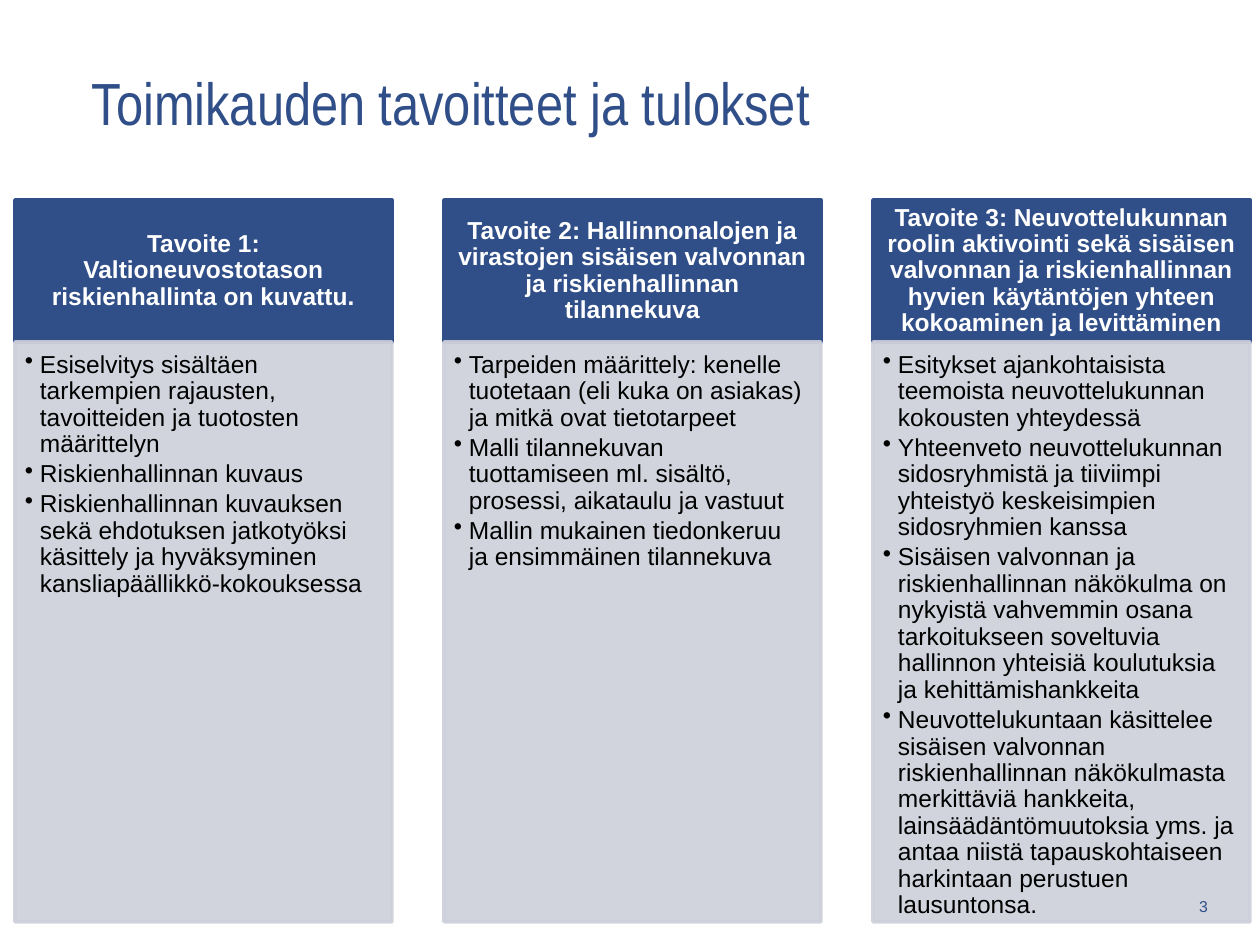
"""Build a slide with three goals and their results side by side."""
from lxml import etree
from pptx import Presentation, util as u
from pptx.dml.color import RGBColor
from pptx.enum import shapes, text
from pptx.oxml.ns import qn

COLORS = {"blue": "304E88", "grey": "CDD0DA", "white": "FFFFFF", "black": "000000"}
TITLE = "Toimikauden tavoitteet ja tulokset"
PAGE_NUMBER = "3"
GOALS = [
    ("Tavoite 1: Valtioneuvostotason riskienhallinta on kuvattu.", [
        "Esiselvitys sisältäen tarkempien rajausten, tavoitteiden ja tuotosten määrittelyn",
        "Riskienhallinnan kuvaus",
        "Riskienhallinnan kuvauksen sekä ehdotuksen jatkotyöksi käsittely ja hyväksyminen "
        "kansliapäällikkö-kokouksessa",
    ]),
    ("Tavoite 2: Hallinnonalojen ja virastojen sisäisen valvonnan ja riskienhallinnan "
     "tilannekuva", [
        "Tarpeiden määrittely: kenelle tuotetaan (eli kuka on asiakas) ja mitkä ovat tietotarpeet",
        "Malli tilannekuvan tuottamiseen ml. sisältö, prosessi, aikataulu ja vastuut",
        "Mallin mukainen tiedonkeruu ja ensimmäinen tilannekuva",
    ]),
    ("Tavoite 3: Neuvottelukunnan roolin aktivointi sekä sisäisen valvonnan ja "
     "riskienhallinnan hyvien käytäntöjen yhteen kokoaminen ja levittäminen", [
        "Esitykset ajankohtaisista teemoista neuvottelukunnan kokousten yhteydessä",
        "Yhteenveto neuvottelukunnan sidosryhmistä ja tiiviimpi yhteistyö keskeisimpien "
        "sidosryhmien kanssa",
        "Sisäisen valvonnan ja riskienhallinnan näkökulma on nykyistä vahvemmin osana "
        "tarkoitukseen soveltuvia hallinnon yhteisiä koulutuksia ja kehittämishankkeita",
        "Neuvottelukuntaan käsittelee sisäisen valvonnan riskienhallinnan näkökulmasta "
        "merkittäviä hankkeita, lainsäädäntömuutoksia yms. ja antaa niistä tapauskohtaiseen "
        "harkintaan perustuen lausuntonsa.",
    ]),
]
LEFT, PITCH, WIDTH = 15, 429, 377
HEADER_TOP, HEADER_HEIGHT, BODY_HEIGHT = 200, 142, 580
INDENT = 15
MIDDLE, TOP = text.MSO_ANCHOR.MIDDLE, text.MSO_ANCHOR.TOP
ALIGN = text.PP_ALIGN


def px(value):
    return u.Emu(round(value * 914400 / 126))


def rgb(name):
    return RGBColor.from_string(COLORS[name])


def set_attributes(target, values):
    for name, value in values.items():
        setattr(target, name, value)


def write(shape, lines, color, font, paragraph_format, anchor, insets, bullets=False):
    frame = shape.text_frame
    set_attributes(frame, {"word_wrap": True, "vertical_anchor": anchor})
    sides = ("margin_left", "margin_top", "margin_right", "margin_bottom")
    set_attributes(frame, dict(zip(sides, map(px, insets))))
    for index, line in enumerate(lines):
        paragraph = frame.paragraphs[0] if index == 0 else frame.add_paragraph()
        run = paragraph.add_run()
        run.text = line
        set_attributes(paragraph, paragraph_format)
        if bullets:
            properties = paragraph._p.get_or_add_pPr()
            properties.set("marL", str(px(INDENT)))
            properties.set("indent", str(-px(INDENT)))
            etree.SubElement(properties, qn("a:buChar"), char="•")
        set_attributes(run.font, font)
        run.font.color.rgb = rgb(color)


def add_panel(slide, box, color, opacity=100):
    panel = slide.shapes.add_shape(shapes.MSO_SHAPE.RECTANGLE, *map(px, box))
    panel.shadow.inherit = False
    panel.line.width = u.Pt(2)
    for fill in (panel.fill, panel.line.fill):
        fill.solid()
        fill.fore_color.rgb = rgb(color)
    if opacity < 100:
        for solid in panel._element.spPr.iter(qn("a:solidFill")):
            etree.SubElement(solid[0], qn("a:alpha"), val=str(opacity * 1000))
    return panel


def add_label(slide, box, label, font, align):
    shape = slide.shapes.add_textbox(*map(px, box))
    write(shape, [label], "blue", font, {"alignment": align}, MIDDLE, (13, 6, 13, 6))


def add_goal(slide, left, heading, results):
    header = add_panel(slide, (left, HEADER_TOP, WIDTH, HEADER_HEIGHT), "blue")
    font = {"name": "Arial", "size": u.Pt(14)}
    write(header, [heading], "white", {**font, "bold": True},
          {"alignment": ALIGN.CENTER, "line_spacing": 0.9}, MIDDLE, (14, 8, 14, 8))
    body_box = (left, HEADER_TOP + HEADER_HEIGHT, WIDTH, BODY_HEIGHT)
    body = add_panel(slide, body_box, "grey", 90)
    body_format = {"alignment": ALIGN.LEFT, "level": 1, "line_spacing": 0.9,
                   "space_after": u.Pt(2.1)}
    write(body, results, "black", font, body_format, TOP, (10, 10, 14, 15), bullets=True)


def main():
    presentation = Presentation()
    presentation.slide_width, presentation.slide_height = px(1260), px(945)
    slide = presentation.slides.add_slide(presentation.slide_layouts[6])
    add_label(slide, (79, 20, 1007, 164), TITLE,
              {"name": "Arial Narrow", "size": u.Pt(34)}, ALIGN.LEFT)
    for index, (heading, results) in enumerate(GOALS):
        add_goal(slide, LEFT + index * PITCH, heading, results)
    add_label(slide, (1155, 886, 66, 40), PAGE_NUMBER,
              {"name": "Arial", "size": u.Pt(9)}, ALIGN.RIGHT)
    presentation.save("out.pptx")


if __name__ == "__main__":
    main()
